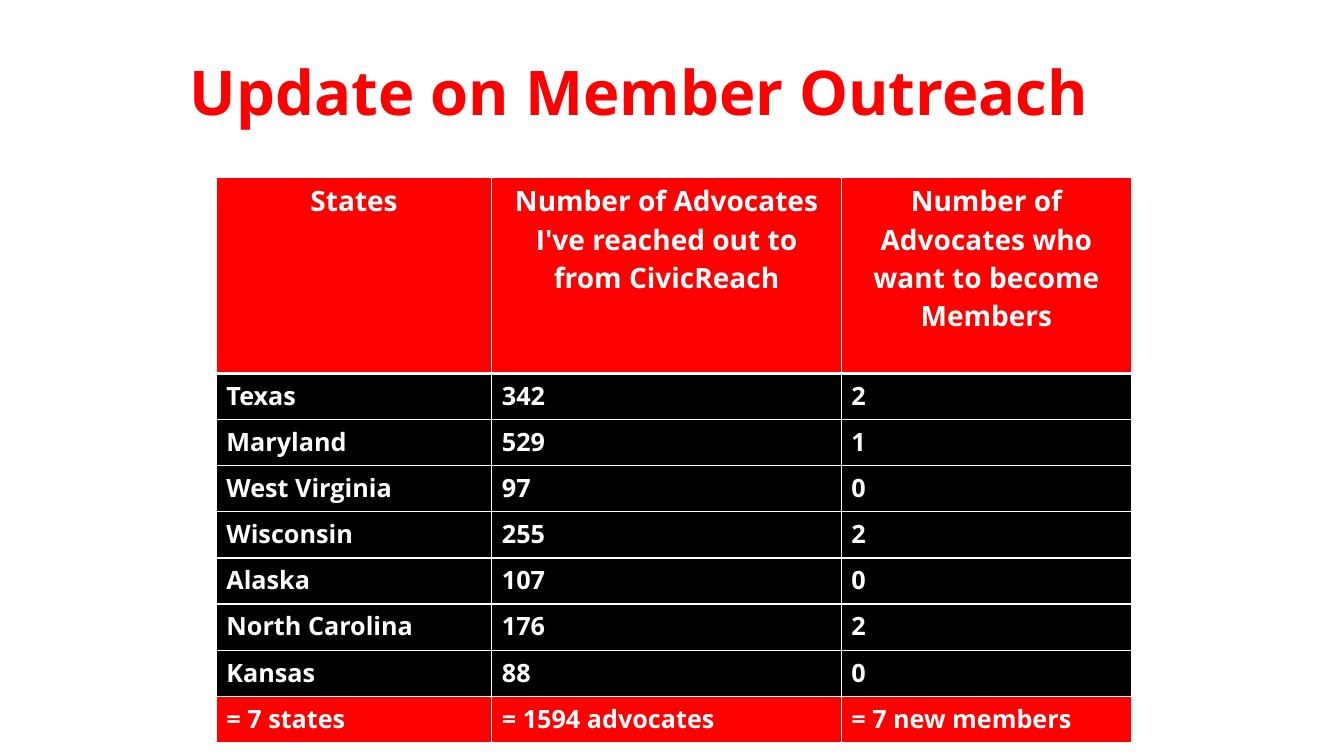
"""Build the member outreach slide: a title above a table of states with totals."""
from dataclasses import dataclass

from lxml.etree import SubElement
from pptx import Presentation
from pptx.dml.color import RGBColor
from pptx.enum.text import MSO_ANCHOR, PP_ALIGN
from pptx.oxml.ns import qn
from pptx.util import Inches, Pt

SLIDE_WIDTH, SLIDE_HEIGHT = Inches(13.33), Inches(7.5)
FONT = "Open Sans"
RED, BLACK, WHITE = "FF0000", "000000", "FFFFFF"
COLUMN_SHARES = (0.205, 0.26, 0.216)
HEADER_SHARE, BODY_SHARE = 0.26, 0.061
THIN, THICK = 1, 3


@dataclass(frozen=True)
class Row:
    """One table row with its look."""

    texts: tuple[str, str, str]
    fill: str = BLACK
    size: int = 18
    align: PP_ALIGN = PP_ALIGN.LEFT
    height: float = BODY_SHARE
    top: int = THIN
    bottom: int = THIN


HEADER = Row(
    ("States", "Number of Advocates I've reached out to from CivicReach",
     "Number of Advocates who want to become Members"),
    RED, 20, PP_ALIGN.CENTER, HEADER_SHARE, bottom=THICK)
STATES = (
    Row(("Texas", "342", "2"), top=THICK),
    Row(("Maryland", "529", "1")),
    Row(("West Virginia", "97", "0")),
    Row(("Wisconsin", "255", "2")),
    Row(("Alaska", "107", "0")),
    Row(("North Carolina", "176", "2")),
    Row(("Kansas", "88", "0")),
)
TOTALS = Row(("= 7 states", "= 1594 advocates", "= 7 new members"), RED)
ROWS = (HEADER, *STATES, TOTALS)


def across(share: float) -> int:
    """Turn a share of the slide width into a length."""
    return round(SLIDE_WIDTH * share)


def down(share: float) -> int:
    """Turn a share of the slide height into a length."""
    return round(SLIDE_HEIGHT * share)


def color(value: str) -> RGBColor:
    """Turn a hex string into a colour."""
    return RGBColor.from_string(value)


def write(paragraph, text: str, size: int, ink: str) -> None:
    """Put bold text into a paragraph."""
    paragraph.text = text
    font = paragraph.font
    font.name, font.size, font.bold = FONT, Pt(size), True
    font.color.rgb = color(ink)


def draw_borders(cell, row: Row) -> None:
    """Draw the four white borders of a cell."""
    properties = cell._tc.get_or_add_tcPr()
    for side, width in (("L", THIN), ("R", THIN), ("T", row.top), ("B", row.bottom)):
        line = SubElement(properties, qn(f"a:ln{side}"), w=str(Pt(width)))
        SubElement(SubElement(line, qn("a:solidFill")), qn("a:srgbClr"), val=WHITE)


def add_title(slide) -> None:
    """Add the slide heading."""
    heading = slide.shapes.add_textbox(
        across(0.134), down(0.03), across(0.863), down(0.193)).text_frame
    heading.word_wrap = True
    heading.vertical_anchor = MSO_ANCHOR.MIDDLE
    paragraph = heading.paragraphs[0]
    write(paragraph, "Update on Member Outreach", 44, RED)
    paragraph.line_spacing = 0.9


def add_outreach_table(slide) -> None:
    """Add the table of outreach by state."""
    outreach = slide.shapes.add_table(
        len(ROWS), len(COLUMN_SHARES), across(0.161), down(0.234),
        across(sum(COLUMN_SHARES)), down(sum(row.height for row in ROWS))).table
    for column, share in zip(outreach.columns, COLUMN_SHARES):
        column.width = across(share)
    for table_row, row in zip(outreach.rows, ROWS):
        table_row.height = down(row.height)
        for cell, text in zip(table_row.cells, row.texts):
            draw_borders(cell, row)
            cell.fill.solid()
            cell.fill.fore_color.rgb = color(row.fill)
            paragraph = cell.text_frame.paragraphs[0]
            write(paragraph, text, row.size, WHITE)
            paragraph.alignment = row.align


def main() -> None:
    """Build and save the slide."""
    deck = Presentation()
    deck.slide_width, deck.slide_height = SLIDE_WIDTH, SLIDE_HEIGHT
    slide = deck.slides.add_slide(deck.slide_layouts[6])
    add_title(slide)
    add_outreach_table(slide)
    deck.save("out.pptx")


if __name__ == "__main__":
    main()
